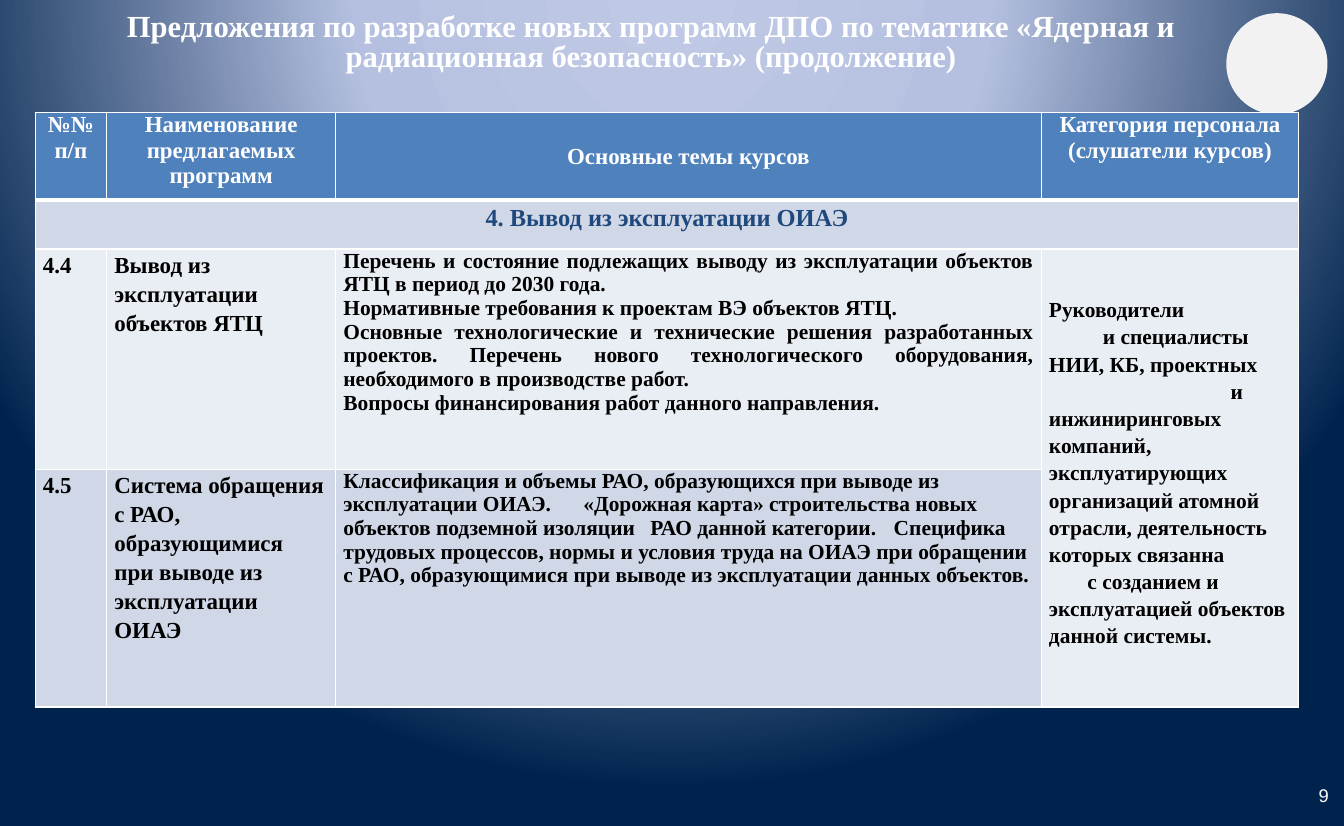
"""Build the slide with proposed nuclear and radiation safety training programmes."""
from dataclasses import dataclass

from lxml import etree
from pptx import Presentation
from pptx import util as u
from pptx.dml.color import RGBColor
from pptx.enum import shapes, text
from pptx.oxml import ns

ALIGN, ANCHOR = text.PP_ALIGN, text.MSO_ANCHOR
WIDTH, HEIGHT = u.Inches(12.21), u.Inches(7.5)


@dataclass(frozen=True)
class Theme:
    """Fonts, colours and type sizes."""
    serif: str = "Times New Roman"
    sans: str = "Arial"
    white: str = "FFFFFF"
    black: str = "000000"
    heading: str = "1F497D"
    header: str = "4F81BD"
    band: str = "D0D8E8"
    pale: str = "E9EDF4"
    emblem: str = "F2F2F2"
    glow: tuple = ((0, "BFC9E5"), (40, "B5C0E0"), (100, "00234D"))
    title: int = 20
    section: int = 16
    label: int = 15
    body: int = 14
    number: int = 12


THEME = Theme()


@dataclass(frozen=True)
class Area:
    """Place on the slide, in percent of its width and height."""
    left: float
    top: float
    width: float
    height: float


@dataclass(frozen=True)
class Para:
    """Paragraph wording with its own layout; lengths are in inches."""
    words: str
    align: ALIGN = ALIGN.LEFT
    indent: float = 0
    after: int = 0
    tabs: tuple = ()


@dataclass(frozen=True)
class Style:
    """Look shared by the paragraphs of one box or cell."""
    size: int
    color: str = THEME.black
    spacing: float = 1
    font: str = THEME.serif
    bold: bool = True


@dataclass(frozen=True)
class Entry:
    """Table cell with its grid position and span."""
    row: int
    column: int
    paras: tuple
    style: Style
    fill: str
    rows: int = 1
    columns: int = 1
    anchor: ANCHOR = ANCHOR.TOP
    top: float = 0


HEADER = Style(THEME.label, THEME.white)
SECTION = Style(THEME.section, THEME.heading, 1.15)
LABEL = Style(THEME.label, spacing=1.15)
TOPICS = Style(THEME.body)
STAFF = Style(THEME.body, spacing=1.15)

TITLE_AREA = Area(8.19, 1.73, 80.51, 12.93)
EMBLEM_AREA = Area(91.24, 1.6, 7.53, 12.27)
NUMBER_AREA = Area(91.32, 93.6, 8.35, 5.33)
COLUMNS = (5.32, 17.04, 52.5, 19.16)
ROWS = (10.67, 5.87, 26.67, 28.8)
TABLE_AREA = Area(2.62, 13.6, sum(COLUMNS), sum(ROWS))

TITLE = ("Предложения по разработке новых программ ДПО по тематике "
         "«Ядерная и радиационная безопасность» (продолжение)")
HEADERS = (("№№", "п/п"), ("Наименование предлагаемых программ",),
           ("Основные темы курсов",), ("Категория персонала (слушатели курсов)",))

ENTRIES = [
    Entry(0, column, tuple(Para(words, ALIGN.CENTER) for words in lines), HEADER, THEME.header,
          anchor=ANCHOR.MIDDLE if column == 2 else ANCHOR.TOP)
    for column, lines in enumerate(HEADERS)
] + [
    Entry(1, 0, (Para("4. Вывод из эксплуатации ОИАЭ", ALIGN.CENTER),), SECTION, THEME.band,
          columns=4),
    Entry(2, 0, (Para("4.4"),), LABEL, THEME.pale),
    Entry(2, 1, (Para("Вывод из эксплуатации объектов ЯТЦ"),), LABEL, THEME.pale),
    Entry(2, 2, (
        Para("Перечень и состояние подлежащих выводу из эксплуатации объектов ЯТЦ "
             "в период до 2030 года.", ALIGN.JUSTIFY),
        Para("Нормативные требования к проектам ВЭ объектов ЯТЦ.", ALIGN.JUSTIFY),
        Para("Основные технологические и технические решения разработанных проектов. Перечень "
             "нового технологического оборудования, необходимого в производстве работ.",
             ALIGN.JUSTIFY),
        Para("Вопросы финансирования работ данного направления.", after=10),
    ), TOPICS, THEME.pale),
    Entry(2, 3, (
        Para("Руководители"),
        Para("и специалисты", indent=0.49),
        Para("НИИ, КБ, проектных"),
        Para("и", indent=1.65),
        Para("инжиниринговых компаний, эксплуатирующих организаций атомной отрасли, "
             "деятельность которых связанна"),
        Para("с созданием и", indent=0.35),
        Para("эксплуатацией объектов данной системы."),
    ), STAFF, THEME.pale, rows=2, top=0.42),
    Entry(3, 0, (Para("4.5"),), LABEL, THEME.band),
    Entry(3, 1, (Para("Система обращения с РАО, образующимися при выводе из эксплуатации ОИАЭ"),),
          LABEL, THEME.band),
    Entry(3, 2, (
        Para("Классификация и объемы РАО, образующихся при выводе из эксплуатации ОИАЭ.\t"
             "«Дорожная карта» строительства новых объектов подземной изоляции\tРАО данной "
             "категории.\tСпецифика трудовых процессов, нормы и условия труда на ОИАЭ при "
             "обращении с РАО, образующимися при выводе из эксплуатации данных объектов.",
             after=10, tabs=(2.18, 2.79, 5)),
    ), TOPICS, THEME.band),
]


def place(area: Area) -> tuple[int, int, int, int]:
    """Turn shares of the slide into lengths."""
    return (int(WIDTH * area.left / 100), int(HEIGHT * area.top / 100),
            int(WIDTH * area.width / 100), int(HEIGHT * area.height / 100))


def add(parent, tag: str, **attributes):
    """Append a drawing element."""
    return etree.SubElement(parent, ns.qn(tag), attributes)


def write(frame, paras: tuple, style: Style) -> None:
    """Fill a text frame with styled paragraphs."""
    for index, item in enumerate(paras):
        para = frame.add_paragraph() if index else frame.paragraphs[0]
        para.text = item.words
        para.alignment = item.align
        para.line_spacing = style.spacing
        para.space_after = u.Pt(item.after)
        properties = para._p.get_or_add_pPr()
        if item.indent:
            properties.set("marL", str(u.Inches(item.indent)))
        if item.tabs:
            stops = add(properties, "a:tabLst")
            for stop in item.tabs:
                add(stops, "a:tab", pos=str(u.Inches(stop)), algn="l")
        font = para.font
        font.name, font.size, font.bold = style.font, u.Pt(style.size), style.bold
        font.color.rgb = RGBColor.from_string(style.color)


def paint_background(page) -> None:
    """Give the page its circular glow."""
    fill = page.background.fill
    fill.solid()
    properties = page._element.cSld.bg.bgPr
    solid = properties.find(ns.qn("a:solidFill"))
    glow = etree.Element(ns.qn("a:gradFill"), rotWithShape="1")
    stops = add(glow, "a:gsLst")
    for share, color in THEME.glow:
        add(add(stops, "a:gs", pos=str(share * 1000)), "a:srgbClr", val=color)
    add(add(glow, "a:path", path="circle"), "a:fillToRect",
        l="50000", t="-80000", r="50000", b="180000")
    properties.replace(solid, glow)


def add_text(page, area: Area, para: Para, style: Style, anchor: ANCHOR, margin: float) -> None:
    """Add a wrapped text box."""
    frame = page.shapes.add_textbox(*place(area)).text_frame
    frame.word_wrap, frame.vertical_anchor = True, anchor
    frame.margin_left = frame.margin_right = u.Inches(margin)
    frame.margin_top = frame.margin_bottom = u.Inches(margin / 2)
    write(frame, (para,), style)


def add_emblem(page) -> None:
    """Add the plain disc in the corner."""
    disc = page.shapes.add_shape(shapes.MSO_SHAPE.OVAL, *place(EMBLEM_AREA))
    disc.shadow.inherit = False
    disc.fill.solid()
    disc.fill.fore_color.rgb = RGBColor.from_string(THEME.emblem)
    disc.line.fill.background()


def style_cell(cell, row: int, fill: str) -> None:
    """Set white borders, thick under the header, and the fill."""
    properties = cell._tc.get_or_add_tcPr()
    for side in "LRTB":
        thick = (row, side) in ((0, "B"), (1, "T"))
        line = add(properties, f"a:ln{side}", w=str(u.Pt(3 if thick else 1)))
        add(add(line, "a:solidFill"), "a:srgbClr", val=THEME.white)
    cell.fill.solid()
    cell.fill.fore_color.rgb = RGBColor.from_string(fill)


def add_programmes(page) -> None:
    """Add the table of programmes."""
    table = page.shapes.add_table(len(ROWS), len(COLUMNS), *place(TABLE_AREA)).table
    for column, share in zip(table.columns, COLUMNS):
        column.width = int(WIDTH * share / 100)
    for row, share in zip(table.rows, ROWS):
        row.height = int(HEIGHT * share / 100)
    for entry in ENTRIES:
        cell = table.cell(entry.row, entry.column)
        last_row, last_column = entry.row + entry.rows, entry.column + entry.columns
        for row in range(entry.row, last_row):
            for column in range(entry.column, last_column):
                style_cell(table.cell(row, column), row, entry.fill)
        if entry.rows * entry.columns > 1:
            cell.merge(table.cell(last_row - 1, last_column - 1))
        cell.margin_left = cell.margin_right = u.Inches(0.07)
        cell.margin_top, cell.margin_bottom = u.Inches(entry.top), 0
        cell.vertical_anchor = entry.anchor
        write(cell.text_frame, entry.paras, entry.style)


def main() -> None:
    """Build and save the deck."""
    deck = Presentation()
    deck.slide_width, deck.slide_height = WIDTH, HEIGHT
    page = deck.slides.add_slide(deck.slide_layouts[6])
    paint_background(page)
    add_text(page, NUMBER_AREA, Para("9", ALIGN.RIGHT),
             Style(THEME.number, THEME.white, font=THEME.sans, bold=False), ANCHOR.MIDDLE, 0.1)
    add_text(page, TITLE_AREA, Para(TITLE, ALIGN.CENTER),
             Style(THEME.title, THEME.white, 0.8), ANCHOR.TOP, 0)
    add_emblem(page)
    add_programmes(page)
    deck.save("out.pptx")


if __name__ == "__main__":
    main()
